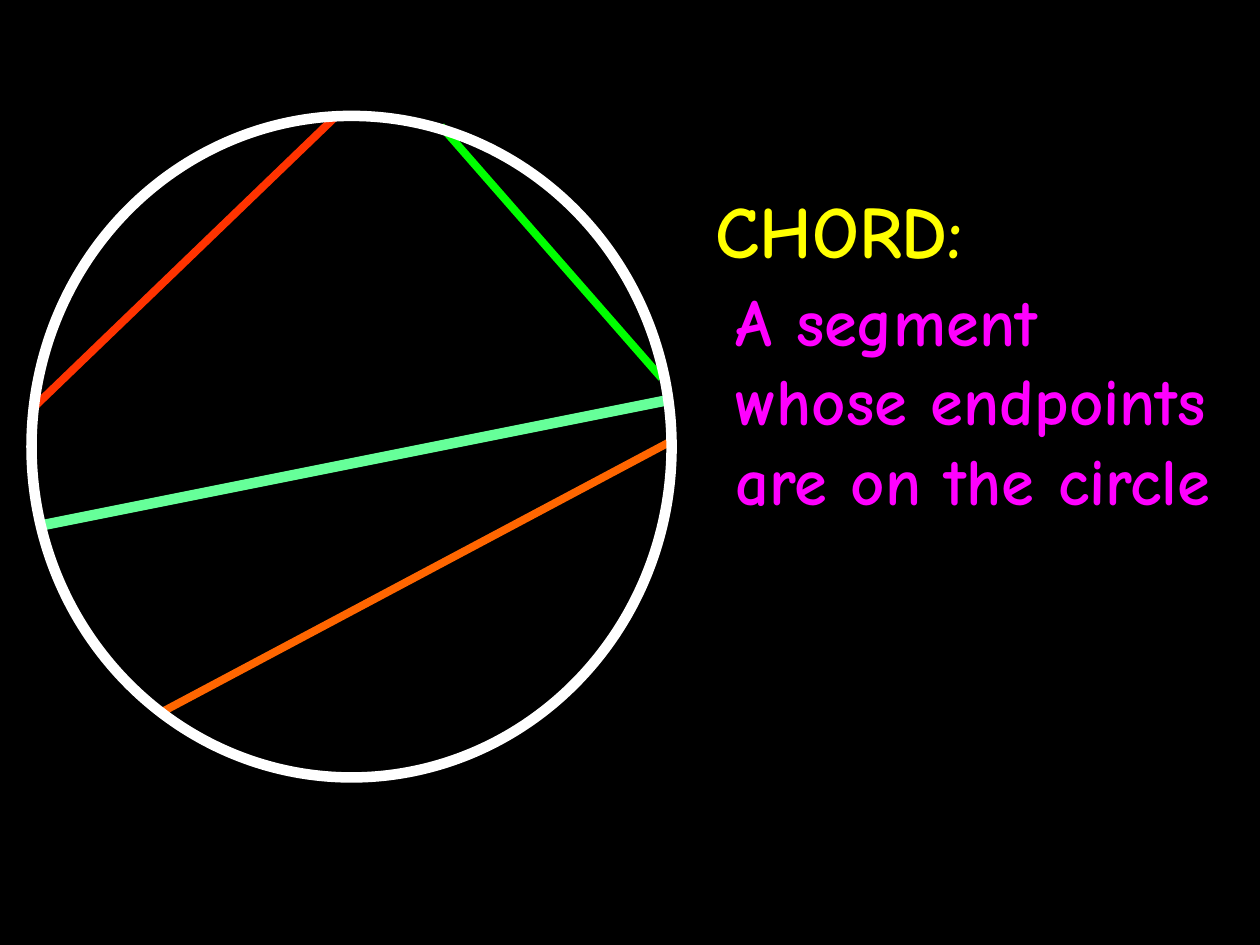
"""Build a slide that defines a chord of a circle."""
import pptx
import pptx.dml.color
import pptx.enum.shapes
import pptx.enum.text
import pptx.oxml.ns
import pptx.util
from lxml import etree

Inches = pptx.util.Inches
Pt = pptx.util.Pt
RGBColor = pptx.dml.color.RGBColor

BLACK = RGBColor(0x00, 0x00, 0x00)
WHITE = RGBColor(0xFF, 0xFF, 0xFF)
YELLOW = RGBColor(0xFF, 0xFF, 0x00)
PINK = RGBColor(0xFF, 0x00, 0xFF)
ORANGE = RGBColor(0xFF, 0x66, 0x00)
RED = RGBColor(0xFF, 0x33, 0x00)
GREEN = RGBColor(0x00, 0xFF, 0x00)
MINT = RGBColor(0x66, 0xFF, 0x99)
FONT = "Comic Neue"

CHORDS = [
    ((1.25, 5.67), (5.33, 3.5), ORANGE, 4.5),
    ((0.25, 3.25), (2.67, 0.92), RED, 4.5),
    ((3.5, 1), (5.25, 3), GREEN, 4.5),
    ((0.33, 4.17), (5.33, 3.17), MINT, 6),
]


def add_chord(slide, start, end, color, width):
    kind = pptx.enum.shapes.MSO_CONNECTOR.STRAIGHT
    chord = slide.shapes.add_connector(kind, *map(Inches, start + end))
    chord.line.color.rgb = color
    chord.line.width = Pt(width)
    props = chord._element.spPr
    etree.SubElement(props, pptx.oxml.ns.qn("a:effectLst"))


def add_circle(slide, box, color, width):
    kind = pptx.enum.shapes.MSO_SHAPE.OVAL
    circle = slide.shapes.add_shape(kind, *map(Inches, box))
    circle.shadow.inherit = False
    circle.fill.background()
    circle.line.color.rgb = color
    circle.line.width = Pt(width)


def add_text(slide, box, text, size, color):
    frame = slide.shapes.add_textbox(*map(Inches, box)).text_frame
    frame.word_wrap = True
    frame.auto_size = pptx.enum.text.MSO_AUTO_SIZE.SHAPE_TO_FIT_TEXT
    run = frame.paragraphs[0].add_run()
    run.text = text
    run.font.name = FONT
    run.font.size = Pt(size)
    run.font.bold = True
    run.font.color.rgb = color


def main():
    deck = pptx.Presentation()
    deck.slide_width = Inches(10)
    deck.slide_height = Inches(7.5)
    slide = deck.slides.add_slide(deck.slide_layouts[6])
    slide.background.fill.solid()
    slide.background.fill.fore_color.rgb = BLACK

    for chord in CHORDS:
        add_chord(slide, *chord)
    add_text(slide, (5.58, 1.42, 4.42, 0.8), "CHORD:", 42, YELLOW)
    add_text(slide, (5.74, 2.17, 4.1, 2.64),
             "A segment whose endpoints are on the circle", 38, PINK)
    add_circle(slide, (0.25, 0.92, 5.08, 5.25), WHITE, 6)
    deck.save("out.pptx")


if __name__ == "__main__":
    main()
